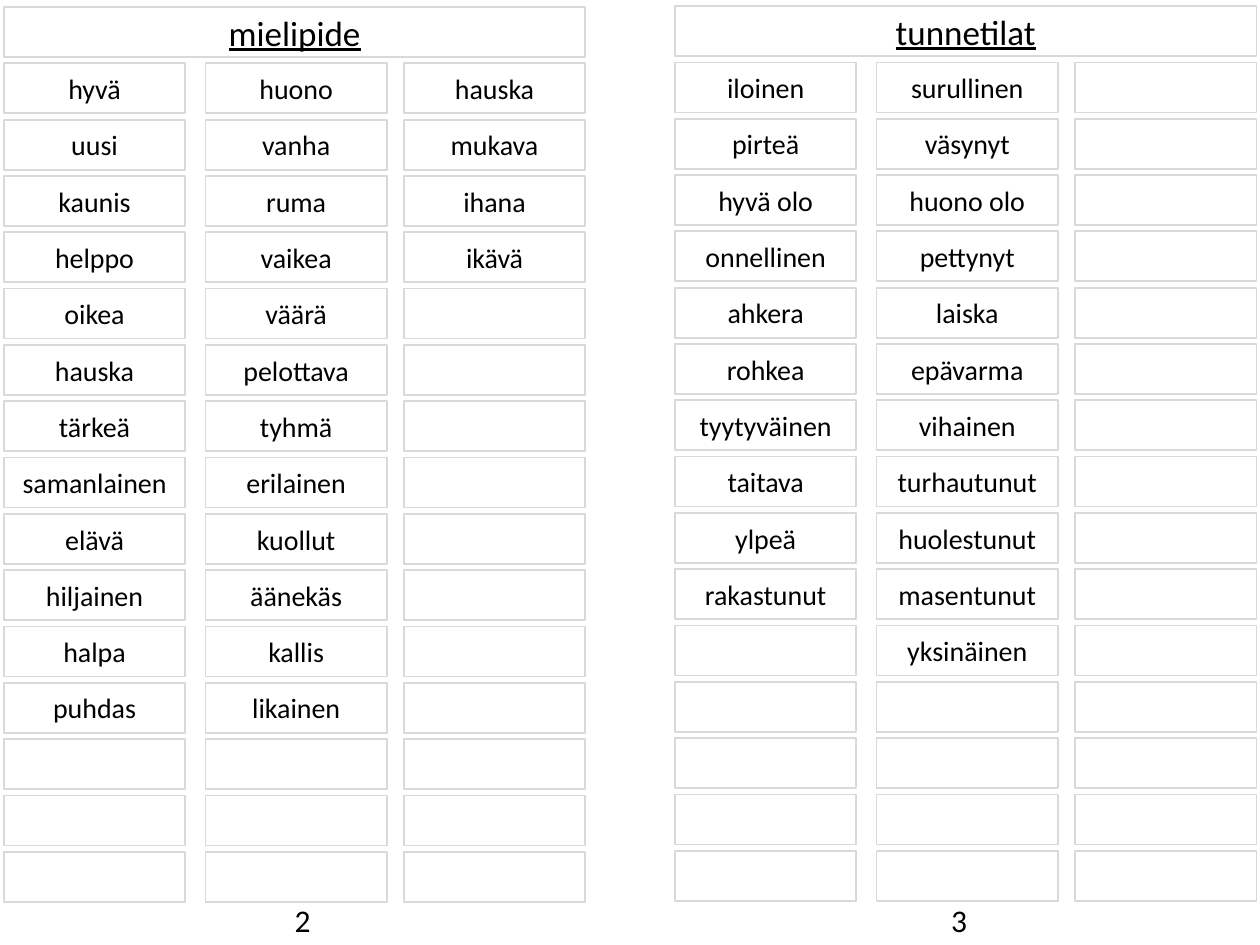
from pptx import Presentation
from pptx.dml.color import RGBColor
from pptx.enum.shapes import MSO_SHAPE
from pptx.enum.text import MSO_ANCHOR, MSO_AUTO_SIZE, PP_ALIGN
from pptx.util import Pt

COLORS = {"text": "000000", "border": "D9D9D9"}
FONT = "Calibri"

PAGES = [
    {
        "title": "mielipide", "number": "2", "left": 2.2, "top": 4,
        "number_left": 161.3, "number_width": 24.5,
        "columns": [
            ["hyvä", "uusi", "kaunis", "helppo", "oikea", "hauska", "tärkeä",
             "samanlainen", "elävä", "hiljainen", "halpa", "puhdas"],
            ["huono", "vanha", "ruma", "vaikea", "väärä", "pelottava", "tyhmä",
             "erilainen", "kuollut", "äänekäs", "kallis", "likainen"],
            ["hauska", "mukava", "ihana", "ikävä"],
        ],
    },
    {
        "title": "tunnetilat", "number": "3", "left": 385.7, "top": 3.5,
        "number_left": 536.4, "number_width": 31,
        "columns": [
            ["iloinen", "pirteä", "hyvä olo", "onnellinen", "ahkera", "rohkea",
             "tyytyväinen", "taitava", "ylpeä", "rakastunut"],
            ["surullinen", "väsynyt", "huono olo", "pettynyt", "laiska", "epävarma",
             "vihainen", "turhautunut", "huolestunut", "masentunut", "yksinäinen"],
            [],
        ],
    },
]

ROW_COUNT = 15
ROW_PITCH = 32.18
COLUMN_OFFSETS = (0, 115.2, 228.6)
CELL_WIDTH = 103.7
CELL_HEIGHT = 28.6
TITLE_WIDTH = COLUMN_OFFSETS[-1] + CELL_WIDTH
NUMBER_TOP = 511.2


def write_text(shape, text, size, underline=False):
    shape.text_frame.text = text
    for run in shape.text_frame.paragraphs[0].runs:
        run.font.name = FONT
        run.font.size = Pt(size)
        run.font.color.rgb = RGBColor.from_string(COLORS["text"])
        if underline:
            run.font.underline = True


def add_box(slide, left, top, width, text, size, underline=False):
    shape = slide.shapes.add_shape(
        MSO_SHAPE.RECTANGLE, Pt(left), Pt(top), Pt(width), Pt(CELL_HEIGHT))
    shape.shadow.inherit = False
    shape.fill.background()
    shape.line.color.rgb = RGBColor.from_string(COLORS["border"])
    shape.line.width = Pt(1)
    if text:
        write_text(shape, text, size, underline)
        shape.text_frame.vertical_anchor = MSO_ANCHOR.MIDDLE
        shape.text_frame.paragraphs[0].alignment = PP_ALIGN.CENTER


def add_page_number(slide, page):
    shape = slide.shapes.add_textbox(
        Pt(page["number_left"]), Pt(NUMBER_TOP), Pt(page["number_width"]), Pt(28.8))
    write_text(shape, page["number"], 18)
    shape.text_frame.word_wrap = True
    shape.text_frame.auto_size = MSO_AUTO_SIZE.SHAPE_TO_FIT_TEXT


def add_page(slide, page):
    add_page_number(slide, page)
    add_box(slide, page["left"], page["top"], TITLE_WIDTH, page["title"], 20, True)
    for offset, words in zip(COLUMN_OFFSETS, page["columns"]):
        cells = words + [""] * (ROW_COUNT - len(words))
        for row, word in enumerate(cells, start=1):
            top = page["top"] + row * ROW_PITCH
            add_box(slide, page["left"] + offset, top, CELL_WIDTH, word, 16)


def main():
    presentation = Presentation()
    presentation.slide_width = Pt(720)
    presentation.slide_height = Pt(540)
    slide = presentation.slides.add_slide(presentation.slide_layouts[6])
    for page in PAGES:
        add_page(slide, page)
    presentation.save("out.pptx")


if __name__ == "__main__":
    main()
